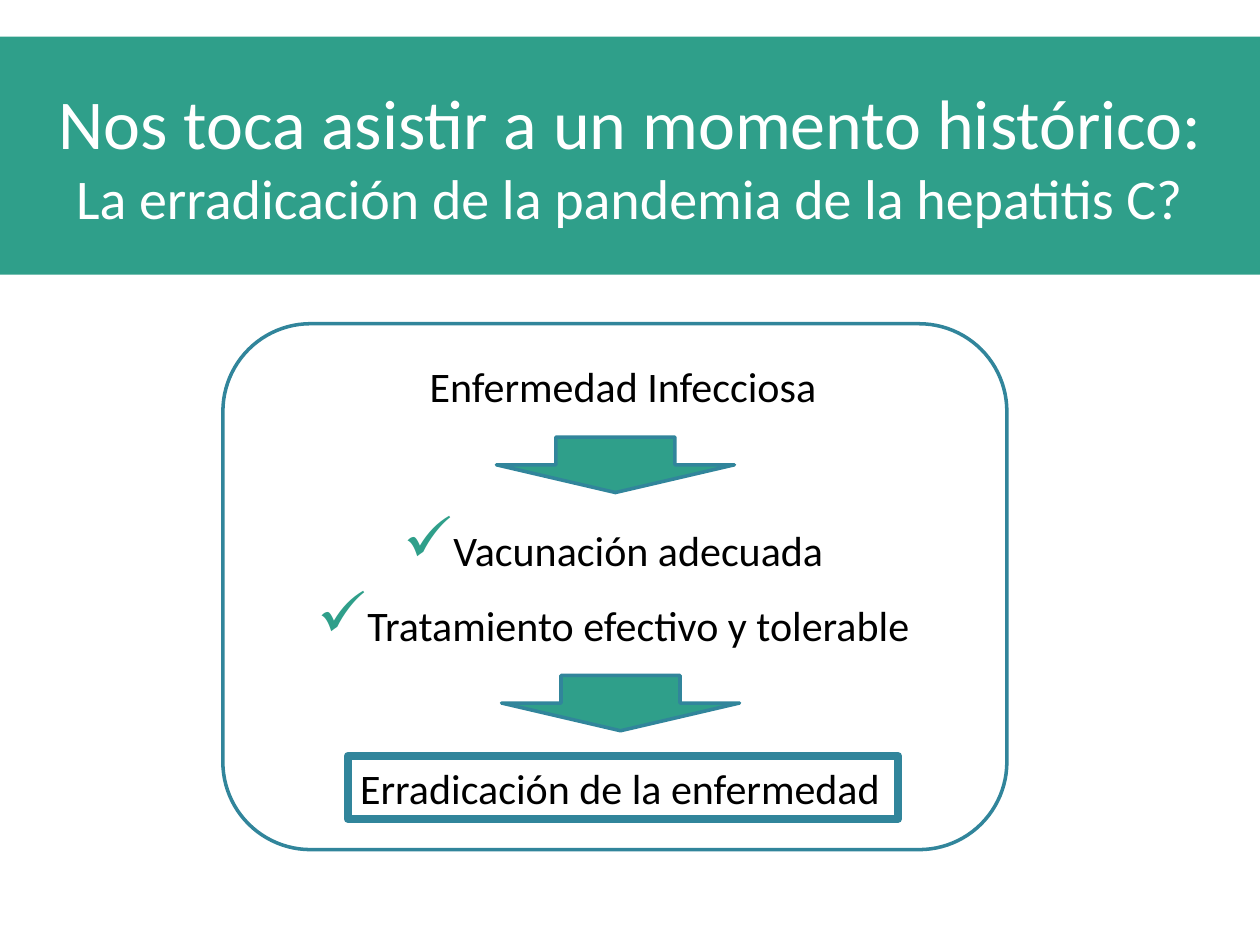
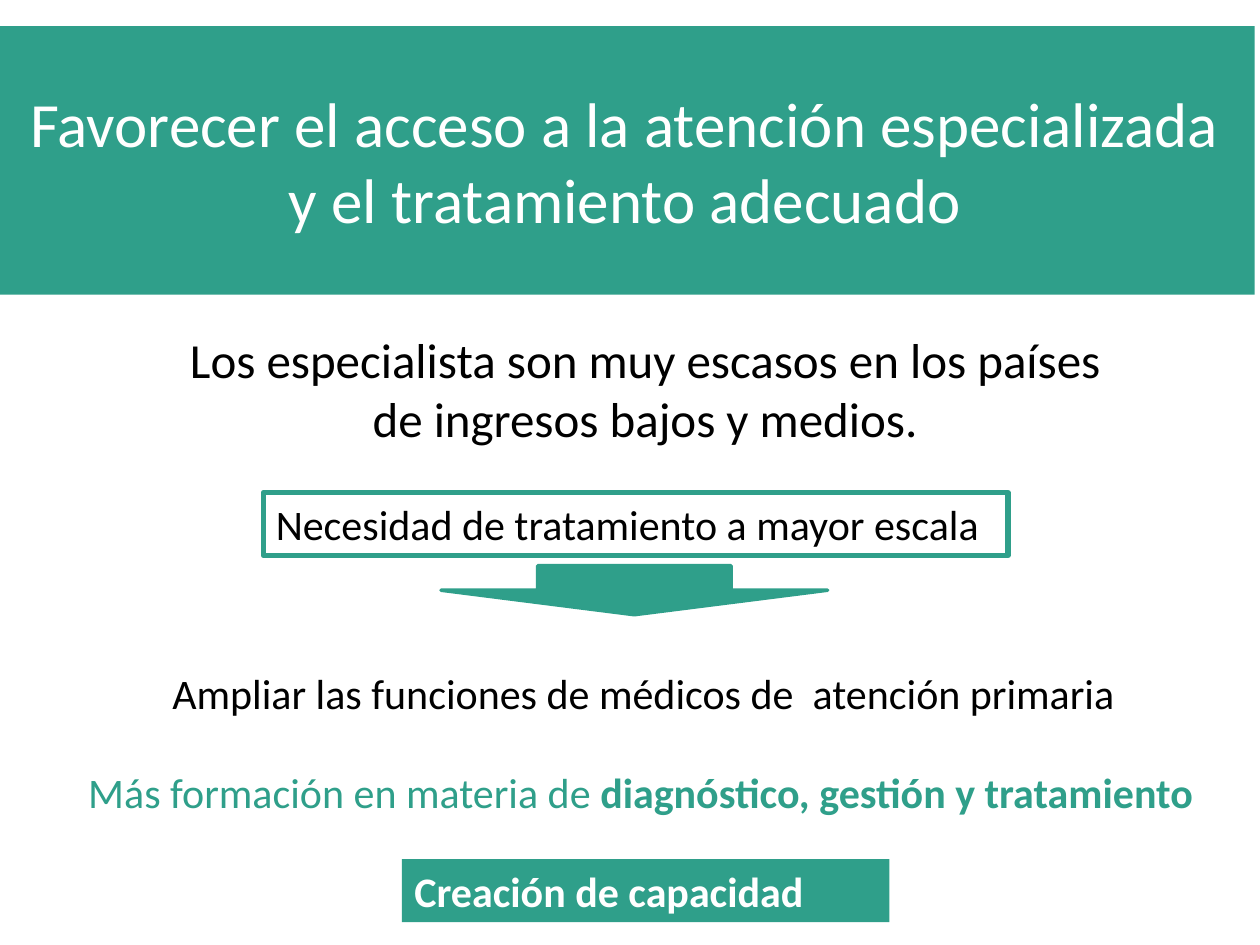
from lxml import etree
from pptx import Presentation
from pptx.dml.color import RGBColor
from pptx.enum.shapes import MSO_SHAPE as SHAPE
from pptx.enum.text import MSO_ANCHOR, MSO_AUTO_SIZE, PP_ALIGN
from pptx.oxml.ns import qn
from pptx.util import Pt

GREEN, BLUE, WHITE, BLACK = "2F9F8A", "31859B", "FFFFFF", "000000"
FONT = "Calibri"
ROW_H = 36


def rgb(value):
    return RGBColor.from_string(value)


def place(sp, box):
    sp.left, sp.top, sp.width, sp.height = (Pt(v) for v in box)


def within(box, x, y, w, h):
    """Turn a position inside box into a position on the slide."""
    return box[0] + x, box[1] + y, w, h


def paint(sp, fill=None, line=None, weight=2):
    if fill:
        sp.fill.solid()
        sp.fill.fore_color.rgb = rgb(fill)
    else:
        sp.fill.background()
    if line:
        sp.line.color.rgb = rgb(line)
        sp.line.width = Pt(weight)
    else:
        sp.line.fill.background()


def format_text(p, size, color, align, bold=False):
    p.alignment = align
    for r in p.runs:
        r.font.name, r.font.size, r.font.bold = FONT, Pt(size), bold
        r.font.color.rgb = rgb(color)


def add_figure(s, kind, box, fill=None, line=None, weight=2):
    sp = s.shapes.add_shape(kind, *(Pt(v) for v in box))
    sp.shadow.inherit = False
    paint(sp, fill, line, weight)
    return sp


def add_text(s, box, text, size=24, color=BLACK, align=PP_ALIGN.LEFT, bold=False,
             fill=None, line=None, weight=2):
    """Add a text box, with a fill or a frame if colours are given."""
    sp = s.shapes.add_textbox(*(Pt(v) for v in box))
    paint(sp, fill, line, weight)
    tf = sp.text_frame
    tf.word_wrap = True
    tf.text = text
    for p in tf.paragraphs:
        format_text(p, size, color, align, bold)
    return tf


def add_checkmark(p):
    pPr = p._p.get_or_add_pPr()
    pPr.set("marL", str(Pt(22.5)))
    pPr.set("indent", str(-Pt(22.5)))
    color = etree.SubElement(pPr, qn("a:buClr"))
    etree.SubElement(color, qn("a:srgbClr"), val=GREEN)
    etree.SubElement(pPr, qn("a:buSzPct"), val="150000")
    etree.SubElement(pPr, qn("a:buChar"), char="✓")


def add_titled_slide(prs, box, lines, sizes):
    """Add a slide whose title fills a green band."""
    s = prs.slides.add_slide(prs.slide_layouts[5])
    title = s.shapes.title
    place(title, box)
    paint(title, GREEN)
    tf = title.text_frame
    tf.text = "\n".join(lines)
    tf.word_wrap = True
    tf.auto_size = MSO_AUTO_SIZE.NONE
    tf.vertical_anchor = MSO_ANCHOR.MIDDLE
    for p, size in zip(tf.paragraphs, sizes):
        format_text(p, size, WHITE, PP_ALIGN.CENTER)
    return s


def add_eradication_panel(s, box):
    add_figure(s, SHAPE.ROUNDED_RECTANGLE, box, WHITE, BLUE)
    add_text(s, within(box, 111, 17.3, 237.6, ROW_H), "Enfermedad Infecciosa")
    tf = add_text(s, within(box, 45.4, 96.5, 355.7, 94.3),
                  "Vacunación adecuada\nTratamiento efectivo y tolerable",
                  align=PP_ALIGN.CENTER)
    for p in tf.paragraphs:
        p.line_spacing = 1.5
        add_checkmark(p)
    for x, y in ((156.3, 64.8), (159.2, 200.9)):
        add_figure(s, SHAPE.DOWN_ARROW, within(box, x, y, 136, 31.7), GREEN, BLUE)
    add_text(s, within(box, 71.3, 247, 314.6, ROW_H), "Erradicación de la enfermedad",
             line=BLUE, weight=4.5)


def add_capacity_flow(s, box):
    add_text(s, within(box, 93.6, 0, 550, 75),
             "Los especialista son muy escasos en los países de ingresos bajos y medios.",
             size=28, align=PP_ALIGN.CENTER)
    add_text(s, within(box, 150.5, 96.5, 425.5, ROW_H),
             "Necesidad de tratamiento a mayor escala", line=GREEN, weight=3)
    add_figure(s, SHAPE.DOWN_ARROW, within(box, 252, 138.3, 221, 28), GREEN, GREEN)
    add_text(s, within(box, 91.4, 193, 563, ROW_H),
             "Ampliar las funciones de médicos de  atención primaria")
    tf = add_text(s, within(box, 31.7, 249.2, 668.9, ROW_H), "Más formación en materia de ")
    p = tf.paragraphs[0]
    r = p.add_run()
    r.text = "diagnóstico, gestión y tratamiento"
    format_text(p, 24, GREEN, PP_ALIGN.CENTER)
    r.font.bold = True
    add_text(s, within(box, 229.7, 306, 278.6, ROW_H), "Creación de capacidad",
             color=WHITE, bold=True, fill=GREEN)


def main():
    prs = Presentation()
    prs.slide_width, prs.slide_height = Pt(720), Pt(540)

    s = add_titled_slide(prs, (0, 20.9, 720, 136),
                         ("Nos toca asistir a un momento histórico:",
                          "La erradicación de la pandemia de la hepatitis C?"), (40, 32))
    add_eradication_panel(s, (127.4, 185, 448, 300.5))

    s = add_titled_slide(prs, (-3, 15, 720, 153.4),
                         ("Favorecer el acceso a la atención especializada",
                          "y el tratamiento adecuado"), (36, 36))
    add_capacity_flow(s, (0, 185, 720, 342))

    prs.save("out.pptx")


if __name__ == "__main__":
    main()
